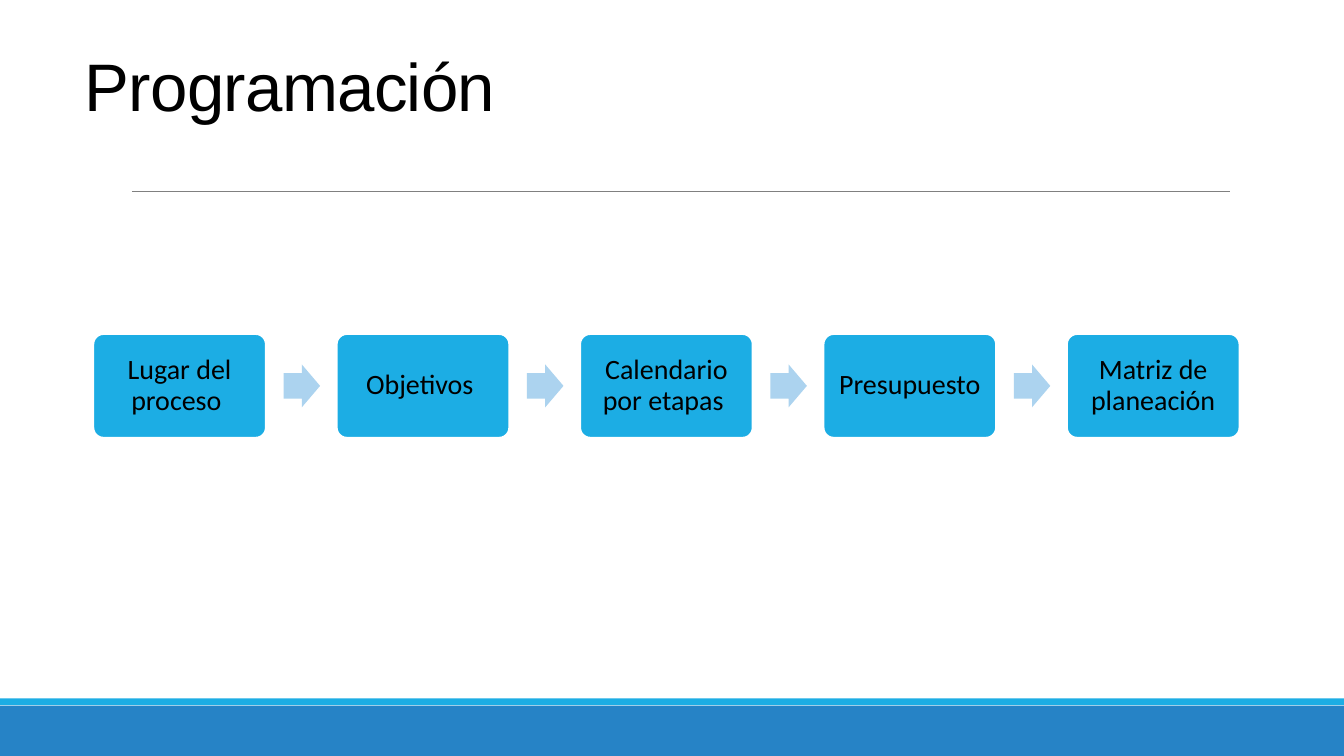
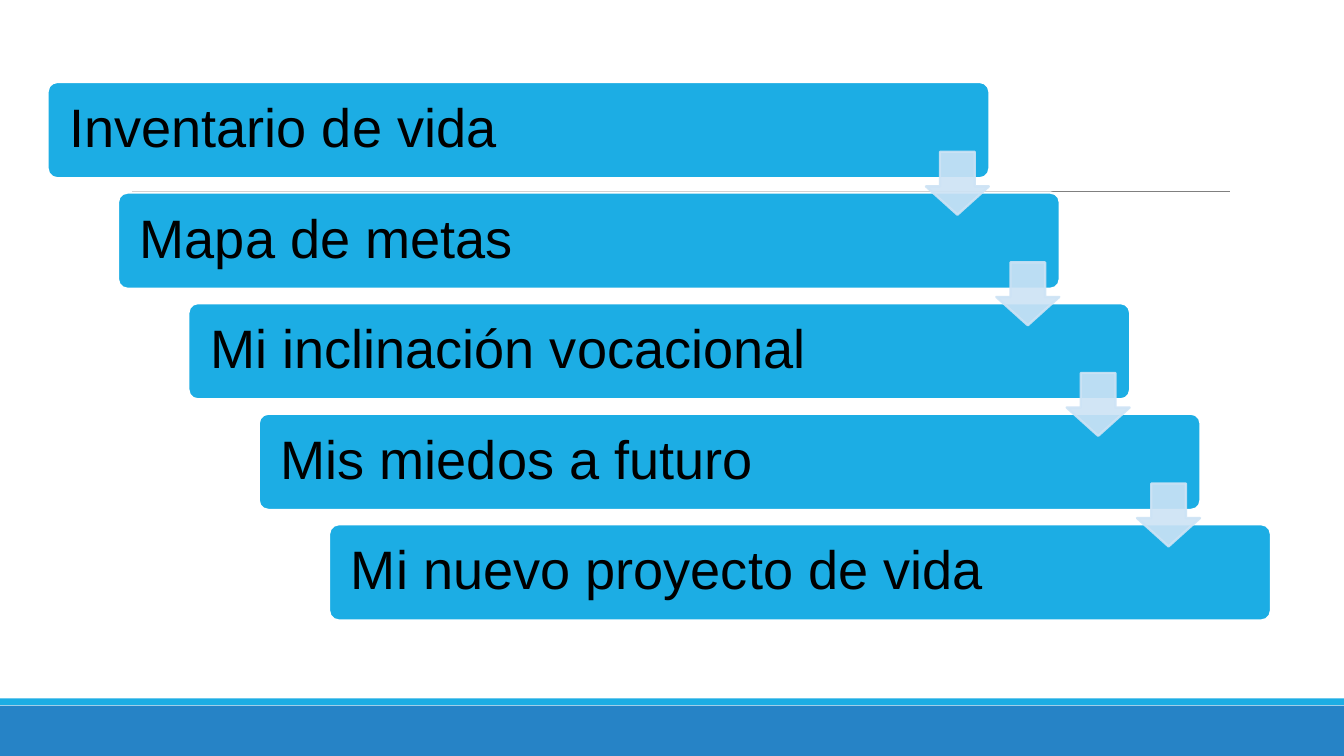
"""Builds two slides on planning a life project: a process chain and a staircase."""
from lxml.etree import SubElement
from pptx import Presentation
from pptx.dml.color import RGBColor
from pptx.enum.shapes import MSO_CONNECTOR, MSO_SHAPE as Shape
from pptx.enum.text import MSO_ANCHOR as Anchor, MSO_AUTO_SIZE as AutoSize, PP_ALIGN as Align
from pptx.oxml.ns import qn
from pptx.util import Cm, Pt

BLACK = RGBColor(0x00, 0x00, 0x00)
WHITE = RGBColor(0xFF, 0xFF, 0xFF)
GRAY = RGBColor(0x80, 0x80, 0x80)
BLUE = RGBColor(0x26, 0x83, 0xC6)
CYAN = RGBColor(0x1C, 0xAD, 0xE4)
PALE_BLUE = RGBColor(0xAC, 0xD3, 0xEF)
ICE_BLUE = RGBColor(0xCD, 0xE3, 0xF5)

TITLE_ONLY, BLANK = 5, 6
WIDTH, HEIGHT = 25.4, 14.29

STAGES = ["Lugar del proceso ", "Objetivos ", "Calendario por etapas ",
          "Presupuesto ", "Matriz de planeación"]
STEPS = ["Inventario de vida", "Mapa de metas", "Mi inclinación vocacional",
         "Mis miedos a futuro", "Mi nuevo proyecto de vida"]


class SlideBuilder:
    def __init__(self):
        self.deck = Presentation()
        self.deck.slide_width, self.deck.slide_height = Cm(WIDTH), Cm(HEIGHT)
        self.page = None

    def add_page(self, layout):
        self.page = self.deck.slides.add_slide(self.deck.slide_layouts[layout])
        self.shape(Shape.RECTANGLE, 0, 13.34, WIDTH, HEIGHT - 13.34, BLUE)
        self.shape(Shape.RECTANGLE, 0, 13.2, WIDTH, 0.13, CYAN)
        self.rule(2.49, 23.24, 3.62)

    def rule(self, left, right, top):
        line = self.page.shapes.add_connector(
            MSO_CONNECTOR.STRAIGHT, Cm(left), Cm(top), Cm(right), Cm(top))
        line.line.color.rgb, line.line.width = GRAY, Pt(0.5)
        SubElement(line._element.spPr, qn("a:effectLst"))

    def title(self, text):
        title = self.page.shapes.title
        title.left, title.top, title.width, title.height = Cm(1.35), Cm(0.94), Cm(19.58), Cm(2.92)
        frame = title.text_frame
        frame.auto_size, frame.vertical_anchor = AutoSize.NONE, Anchor.TOP
        self.set_text(frame, text, "Arial", 36, Align.LEFT, 0.85)
        frame.paragraphs[0].runs[0].font._element.set("spc", "-40")

    def set_text(self, frame, text, font, size, align, spacing):
        frame.word_wrap = True
        para = frame.paragraphs[0]
        para.add_run().text = text
        para.alignment, para.line_spacing = align, spacing
        para.font.name, para.font.size = font, Pt(size)
        para.font.color.rgb = BLACK

    def shape(self, kind, left, top, width, height, fill, line=None, adjust=(), alpha=None):
        shape = self.page.shapes.add_shape(kind, Cm(left), Cm(top), Cm(width), Cm(height))
        shape.shadow.inherit = False
        for index, value in enumerate(adjust):
            shape.adjustments[index] = value
        shape.fill.solid()
        shape.fill.fore_color.rgb = fill
        if line is None:
            shape.line.fill.background()
        else:
            shape.line.color.rgb, shape.line.width = line, Pt(1.25)
        if alpha is not None:
            for color in shape._element.spPr.iter(qn("a:srgbClr")):
                SubElement(color, qn("a:alpha")).set("val", str(alpha * 1000))
        return shape

    def box(self, text, left, top, width, height, font, size, align, inset):
        box = self.shape(Shape.ROUNDED_RECTANGLE, left, top, width, height, CYAN, WHITE, [0.1])
        frame = box.text_frame
        frame.vertical_anchor = Anchor.MIDDLE
        frame.margin_left = frame.margin_right = Cm(inset)
        frame.margin_top = frame.margin_bottom = Cm(inset)
        self.set_text(frame, text, font, size, align, 0.9)

    def chain(self, labels):
        for index, label in enumerate(labels):
            left = 1.76 + 4.6 * index
            self.box(label, left, 6.31, 3.27, 1.97, "Calibri", 15, Align.CENTER, 0.2)
            if index < len(labels) - 1:
                self.shape(Shape.RIGHT_ARROW, left + 3.6, 6.89, 0.69, 0.81,
                           PALE_BLUE, adjust=[0.6, 0.5])

    def staircase(self, labels):
        shifts = [(1.33 * index, 2.09 * index) for index in range(len(labels))]
        for label, (across, down) in zip(labels, shifts):
            self.box(label, 0.9 + across, 1.55 + down, 17.8, 1.82, "Arial", 29, Align.LEFT, 0.36)
        for across, down in shifts[:-1]:
            self.shape(Shape.DOWN_ARROW, 17.5 + across, 2.87 + down, 1.19, 1.19,
                       ICE_BLUE, ICE_BLUE, [0.55, 0.45], 90)


def main():
    builder = SlideBuilder()
    builder.add_page(TITLE_ONLY)
    builder.title("Programación")
    builder.chain(STAGES)
    builder.add_page(BLANK)
    builder.staircase(STEPS)
    builder.deck.save("out.pptx")


if __name__ == "__main__":
    main()
